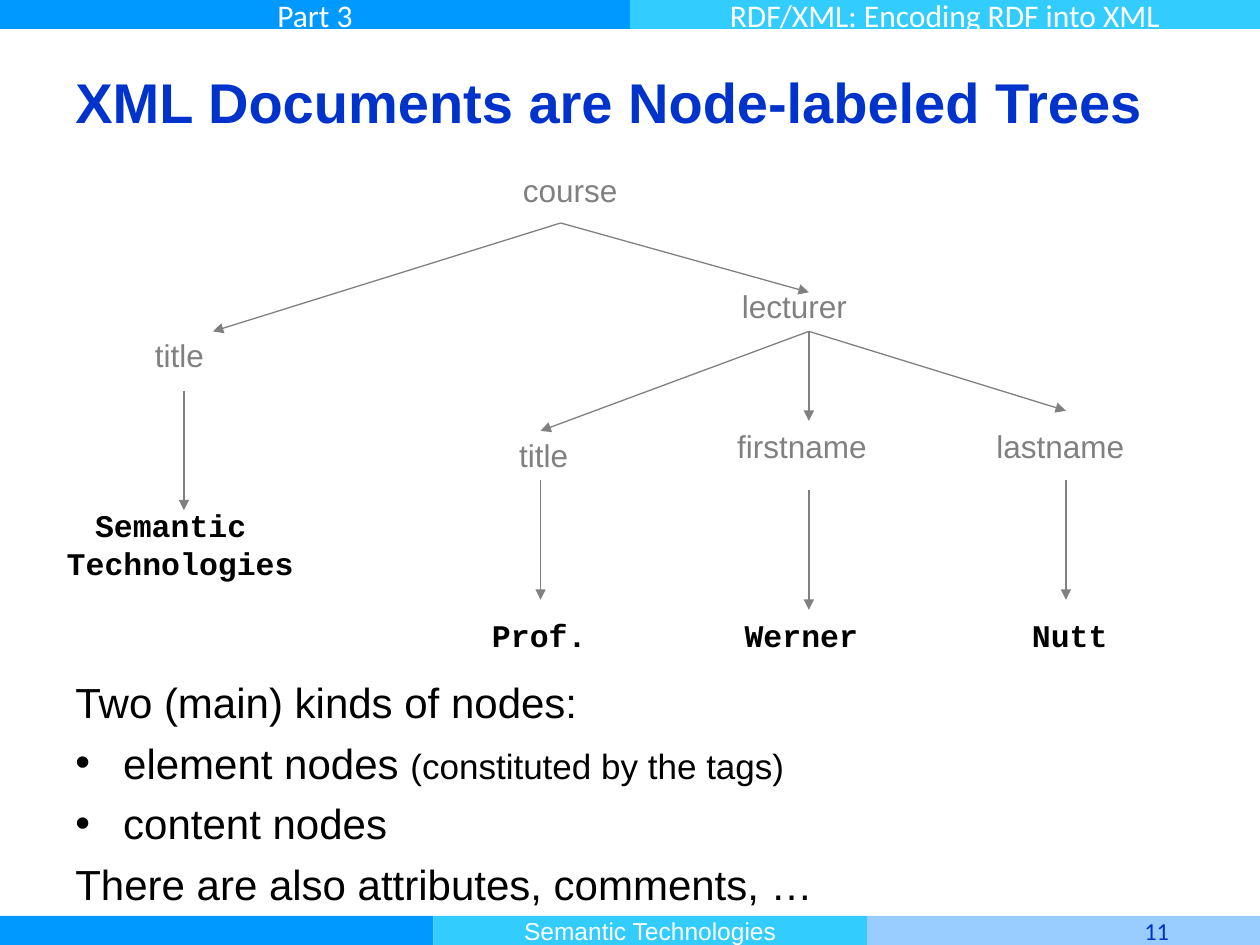
from lxml.etree import SubElement
from pptx import Presentation
from pptx.dml.color import RGBColor
from pptx.enum.shapes import MSO_CONNECTOR, MSO_SHAPE
from pptx.enum.text import MSO_ANCHOR, PP_ALIGN
from pptx.oxml.ns import qn
from pptx.util import Inches, Pt

COLOURS = {
    "blue": "0099FF", "cyan": "33CCFF", "pale": "99CCFF", "navy": "0033CC",
    "grey": "808080", "black": "000000", "white": "FFFFFF",
}


def add_run(paragraph, text, size, colour, font="Arial", bold=False):
    run = paragraph.add_run()
    run.text = text
    run.font.size = Pt(size)
    run.font.name = font
    run.font.bold = bold
    run.font.color.rgb = RGBColor.from_string(COLOURS[colour])


def add_text_frame(left, top, width, height, anchor=MSO_ANCHOR.TOP):
    box = slide.shapes.add_textbox(Inches(left), Inches(top), Inches(width), Inches(height))
    box.text_frame.word_wrap = True
    box.text_frame.vertical_anchor = anchor
    return box.text_frame


presentation = Presentation()
presentation.slide_width = Inches(10)
presentation.slide_height = Inches(7.5)
slide = presentation.slides.add_slide(presentation.slide_layouts[6])

# Header and footer bands: left, top, width, fill, text, size, font, text colour, left inset
bands = [
    (6.88, 7.27, 3.12, "pale", "11", 14, "Calibri", "navy", 1.58),
    (0, 7.27, 3.44, "blue", "", 14, "Arial", "white", 0.1),
    (3.44, 7.27, 3.44, "cyan", "Semantic Technologies", 14, "Arial", "white", 0.1),
    (0, 0, 5, "blue", "Part 3", 18, "Calibri", "white", 0.1),
    (5, 0, 5, "cyan", "RDF/XML: Encoding RDF into XML", 18, "Calibri", "white", 0.1),
]
for left, top, width, fill, text, size, font, colour, inset in bands:
    band = slide.shapes.add_shape(
        MSO_SHAPE.RECTANGLE, Inches(left), Inches(top), Inches(width), Inches(0.23))
    band.shadow.inherit = False
    band.fill.solid()
    band.fill.fore_color.rgb = RGBColor.from_string(COLOURS[fill])
    band.line.fill.background()
    if text:
        band.text_frame.margin_left = Inches(inset)
        band.text_frame.vertical_anchor = MSO_ANCHOR.MIDDLE
        paragraph = band.text_frame.paragraphs[0]
        paragraph.alignment = PP_ALIGN.CENTER
        add_run(paragraph, text, size, colour, font)

# Title
title_frame = add_text_frame(0.5, 0.3, 9, 1.01, MSO_ANCHOR.MIDDLE)
add_run(title_frame.paragraphs[0], "XML Documents are Node-labeled Trees", 32, "navy", bold=True)

# Element nodes of the tree
element_nodes = [
    ("course", 3.61, 1.31), ("lecturer", 5.39, 2.23), ("title", 0.51, 2.62),
    ("title", 3.4, 3.41), ("firstname", 5.45, 3.34), ("lastname", 7.5, 3.34),
]
for text, left, top in element_nodes:
    paragraph = add_text_frame(left, top, 1.83, 0.4).paragraphs[0]
    paragraph.alignment = PP_ALIGN.CENTER
    add_run(paragraph, text, 18, "grey")

# Content nodes of the tree
content_nodes = [
    (["Semantic ", "Technologies"], 0.43, 3.97), (["Prof."], 3.28, 4.84),
    (["Werner"], 5.36, 4.84), (["Nutt"], 7.49, 4.84),
]
for lines, left, top in content_nodes:
    paragraph = add_text_frame(left, top, 2, 0.4 if len(lines) == 1 else 0.71).paragraphs[0]
    paragraph.alignment = PP_ALIGN.CENTER
    for index, line in enumerate(lines):
        if index:
            paragraph.add_line_break()
        add_run(paragraph, line, 18, "black", "Courier New", bold=True)

# Arrows from parent to child
course, lecturer = (4.45, 1.77), (6.42, 2.63)
arrows = [
    (course, (1.69, 2.63)), (course, (6.42, 2.32)),
    (lecturer, (4.29, 3.42)), (lecturer, (8.46, 3.26)), (lecturer, (6.42, 3.34)),
]
for x, y in [(1.46, 3.1), (4.29, 3.81), (6.42, 3.89), (8.46, 3.81)]:
    arrows.append(((x, y), (x, y + 0.95)))
for start, end in arrows:
    arrow = slide.shapes.add_connector(
        MSO_CONNECTOR.STRAIGHT, *[Inches(value) for value in start + end])
    arrow.line.color.rgb = RGBColor.from_string(COLOURS["grey"])
    arrow.line.width = Pt(0.75)
    SubElement(arrow.line._get_or_add_ln(), qn("a:tailEnd"), type="triangle")
    SubElement(arrow._element.spPr, qn("a:effectLst"))

# Explanation: bulleted or not, runs with their sizes
explanation = [
    (False, [("Two (main) kinds of nodes:", 24)]),
    (True, [("element nodes ", 24), ("(constituted by the tags)", 20)]),
    (True, [("content nodes", 24)]),
    (False, [("There are also attributes, comments, …", 24)]),
]
body_frame = add_text_frame(0.5, 5.32, 9, 1.89)
for index, (bulleted, runs) in enumerate(explanation):
    paragraph = body_frame.add_paragraph() if index else body_frame.paragraphs[0]
    paragraph.space_before = Pt(5.8)
    if bulleted:
        properties = paragraph._p.get_or_add_pPr()
        properties.set("marL", str(Inches(0.38)))
        properties.set("indent", str(-Inches(0.38)))
        SubElement(properties, qn("a:buFont"), typeface="Arial")
        SubElement(properties, qn("a:buChar"), char="•")
    for text, size in runs:
        add_run(paragraph, text, size, "black")

presentation.save("out.pptx")
